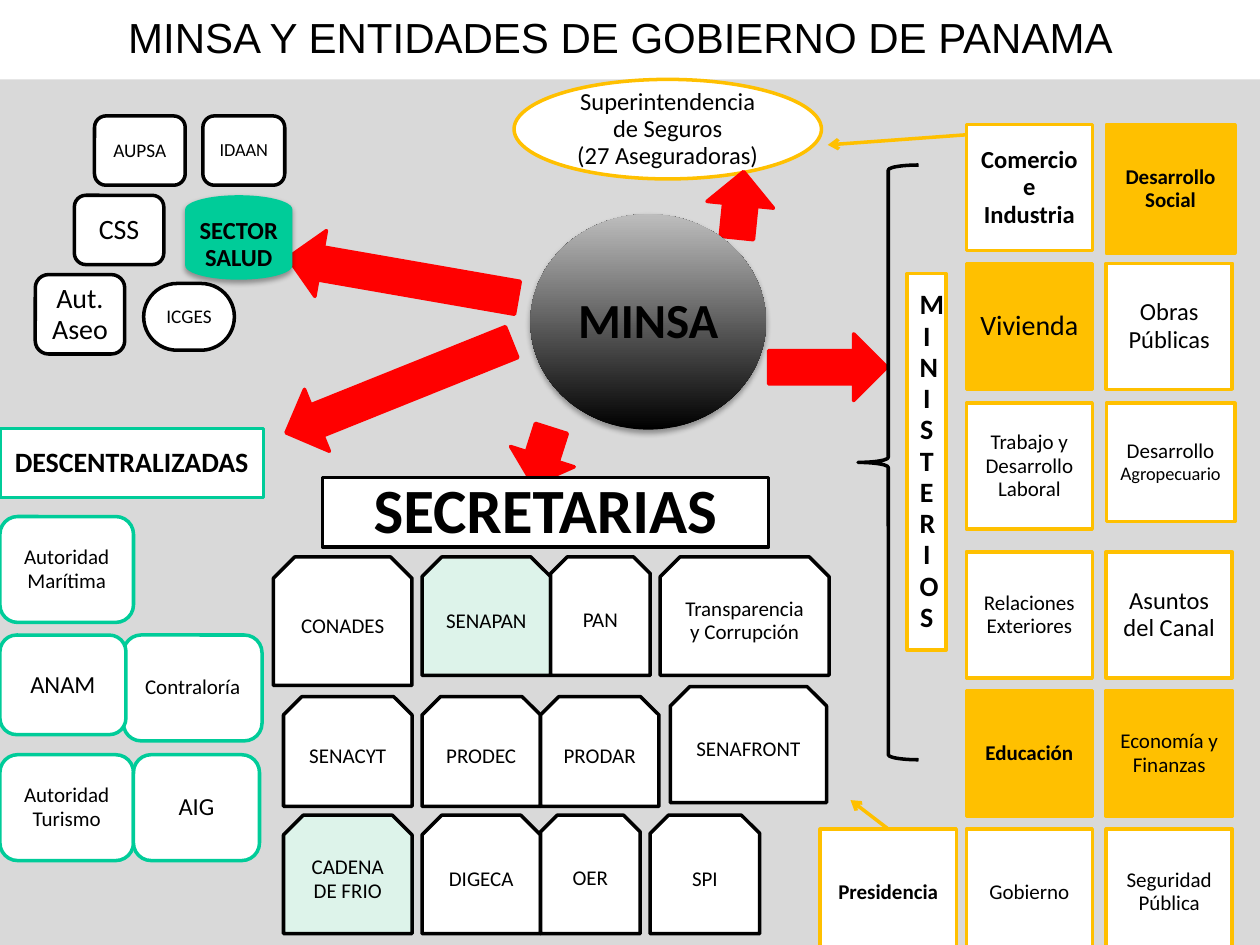
from lxml import etree
from pptx import Presentation
from pptx.dml.color import RGBColor
from pptx.enum.shapes import MSO_CONNECTOR, MSO_SHAPE as SHAPE
from pptx.enum.text import MSO_ANCHOR, PP_ALIGN
from pptx.oxml import parse_xml
from pptx.oxml.ns import nsdecls, qn
from pptx.util import Inches, Pt

BLACK = RGBColor(0x00, 0x00, 0x00)
WHITE = RGBColor(0xFF, 0xFF, 0xFF)
GREY = RGBColor(0xD9, 0xD9, 0xD9)
SILVER = RGBColor(0xBD, 0xBD, 0xBD)
RED = RGBColor(0xFF, 0x00, 0x00)
GREEN = RGBColor(0x00, 0xCC, 0x99)
MINT = RGBColor(0xDD, 0xF3, 0xEA)
GOLD = RGBColor(0xFF, 0xC0, 0x00)

TITLE = "MINSA Y ENTIDADES DE GOBIERNO DE PANAMA"

# text, (left, top, width, height), size
DECENTRALIZED = [
    ("Autoridad Turismo", (0, 5.99, 1.06, 0.84), 12),
    ("Contraloría", (0.98, 5.04, 1.1, 0.84), 12),
    ("ANAM", (0, 5.04, 1, 0.79), 14),
    ("Autoridad Marítima", (0, 4.1, 1.06, 0.84), 12),
    ("AIG", (1.06, 5.99, 1, 0.84), 14),
]
HEALTH = [
    ("CSS", (0.59, 1.55, 0.71, 0.55), 16),
    ("IDAAN", (1.61, 0.92, 0.65, 0.55), 10.5),
    ("AUPSA", (0.75, 0.92, 0.72, 0.55), 11),
    ("Aut. Aseo", (0.28, 2.18, 0.71, 0.63), 16),
]
# text, (left, top, width, height), fill
SECRETARIATS = [
    ("CONADES", (2.17, 4.42, 1.1, 1.02), WHITE),
    ("SENAPAN", (3.35, 4.42, 1.02, 0.94), MINT),
    ("PAN", (4.37, 4.42, 0.79, 0.94), WHITE),
    ("Transparencia y Corrupción", (5.24, 4.42, 1.34, 0.94), WHITE),
    ("SENACYT", (2.25, 5.53, 1.02, 0.87), WHITE),
    ("PRODEC", (3.35, 5.53, 0.94, 0.87), WHITE),
    ("PRODAR", (4.29, 5.53, 0.94, 0.87), WHITE),
    ("SENAFRONT", (5.32, 5.45, 1.24, 0.92), WHITE),
    ("CADENA DE FRIO", (2.25, 6.47, 1.02, 0.94), MINT),
    ("DIGECA", (3.35, 6.47, 0.94, 0.94), WHITE),
    ("OER", (4.29, 6.47, 0.79, 0.94), WHITE),
    ("SPI", (5.16, 6.47, 0.87, 0.94), WHITE),
]
# One row per pair of ministries: top, then (text, size, bold, fill, (width, height))
MINISTRY_LEFTS = (7.67, 8.78)
UNIT = (1, 1)
AGRICULTURE = [("Desarrollo ", 12), ("A", 11), ("gropecuario", 10.5)]
MINISTRIES = [
    (0.99, [("Comercio e Industria", 14, True, WHITE, UNIT),
            ("Desarrollo Social", 12, True, GOLD, (1.02, 1.02))]),
    (2.09, [("Vivienda", 16, False, GOLD, UNIT),
            ("Obras Públicas", 14, False, WHITE, UNIT)]),
    (3.2, [("Trabajo y Desarrollo Laboral", 12, False, WHITE, UNIT),
           (AGRICULTURE, 12, False, WHITE, (1.02, 0.94))]),
    (4.38, [("Relaciones\nExteriores", 12, False, WHITE, UNIT),
            ("Asuntos del Canal", 14, False, WHITE, UNIT)]),
    (5.48, [("Educación", 12, True, GOLD, UNIT),
            ("Economía y Finanzas", 12, False, GOLD, UNIT)]),
    (6.58, [("Gobierno", 12, False, WHITE, UNIT),
            ("Seguridad Pública", 12, False, WHITE, UNIT)]),
]

prs = Presentation()
prs.slide_width, prs.slide_height = Inches(10), Inches(7.5)
shapes = prs.slides.add_slide(prs.slide_layouts[6]).shapes


def write(sp, text, size, bold=False, font="Calibri", anchor=MSO_ANCHOR.MIDDLE):
    """Fill a shape with text; a list gives (words, size) runs of one paragraph."""
    tf = sp.text_frame
    tf.word_wrap = True
    tf.vertical_anchor = anchor
    if isinstance(text, str):
        paragraphs = [[(line, size)] for line in text.split("\n")]
    else:
        paragraphs = [text]
    for i, runs in enumerate(paragraphs):
        p = tf.paragraphs[0] if i == 0 else tf.add_paragraph()
        p.alignment = PP_ALIGN.CENTER
        p.line_spacing = 0.93
        for words, points in runs:
            r = p.add_run()
            r.text = words
            for name, value in {"name": font, "size": Pt(points), "bold": bold}.items():
                setattr(r.font, name, value)
            r.font.color.rgb = BLACK


def add(kind, at, fill=WHITE, line=None, text=None, size=12, bold=False, rotation=0):
    sp = shapes.add_shape(kind, *map(Inches, at))
    sp.shadow.inherit = False
    sp.rotation = rotation
    if fill is None:
        sp.fill.background()
    else:
        sp.fill.solid()
        sp.fill.fore_color.rgb = fill
    if line is None:
        sp.line.fill.background()
    else:
        sp.line.color.rgb = line
        sp.line.width = Pt(2)
    if text:
        write(sp, text, size, bold)
    return sp


def add_arrow(kind, at, rotation=0):
    sp = add(kind, at, RED, RED, rotation=rotation)
    etree.SubElement(sp.line._get_or_add_ln(), qn("a:round"))


def add_pointer(start, end):
    cx = shapes.add_connector(MSO_CONNECTOR.STRAIGHT, *map(Inches, start + end))
    cx.line.color.rgb = GOLD
    cx.line.width = Pt(2)
    etree.SubElement(cx.line._get_or_add_ln(), qn("a:tailEnd"), type="arrow")
    etree.SubElement(cx._element.spPr, qn("a:effectLst"))
    return cx


def drop_shadow(sp):
    effects = sp._element.spPr.find(qn("a:effectLst"))
    effects.append(parse_xml(
        f'<a:outerShdw {nsdecls("a")} blurRad="{Pt(3.1)}" dist="{Pt(1.8)}" dir="5400000" '
        'rotWithShape="0"><a:srgbClr val="000000"><a:alpha val="35000"/></a:srgbClr>'
        '</a:outerShdw>'))


add(SHAPE.RECTANGLE, (0, 0.63, 10, 7.12), GREY)
title = shapes.add_textbox(*map(Inches, (0.28, 0.08, 9.29, 0.92)))
write(title, TITLE, 24, font="Arial", anchor=MSO_ANCHOR.TOP)

# Decentralized bodies
add_arrow(SHAPE.DOWN_ARROW, (2.9, 2.11, 0.53, 1.93), 68.1)
for text, at, size in DECENTRALIZED:
    add(SHAPE.ROUNDED_RECTANGLE, at, WHITE, GREEN, text, size)
add(SHAPE.RECTANGLE, (0, 3.4, 2.09, 0.55), WHITE, GREEN, "DESCENTRALIZADAS", 16, True)

# Secretariats
add_arrow(SHAPE.DOWN_ARROW, (4.04, 3.39, 0.53, 0.47), 17.7)
for text, at, fill in SECRETARIATS:
    add(SHAPE.SNIP_2_SAME_RECTANGLE, at, fill, BLACK, text)
add(SHAPE.RECTANGLE, (2.56, 3.79, 3.54, 0.55), WHITE, BLACK, "SECRETARIAS", 36, True)

# Ministries
add(SHAPE.OVAL, (4.08, 0.63, 2.44, 0.79), WHITE, GOLD,
    "Superintendencia de Seguros\n(27 Aseguradoras)", 14)
add_arrow(SHAPE.RIGHT_ARROW, (5.61, 1.36, 0.53, 0.53), 275.8)
for top, row in MINISTRIES:
    for left, (text, size, bold, fill, extent) in zip(MINISTRY_LEFTS, row):
        add(SHAPE.RECTANGLE, (left, top) + extent, fill, GOLD, text, size, bold)
presidency = add(SHAPE.RECTANGLE, (6.51, 6.58, 1.08, 1), WHITE, GOLD,
                 "Presidencia", 12, True)
add_arrow(SHAPE.RIGHT_ARROW, (6.1, 2.65, 0.94, 0.53))
add(SHAPE.LEFT_BRACE, (6.81, 1.31, 0.48, 4.72), None, BLACK)
add_pointer((7.67, 1.07), (6.57, 1.15))
banner = add(SHAPE.RECTANGLE, (5.86, 3.51, 2.99, 0.31), WHITE, GOLD,
             "\n".join("MINISTERIOS"), 16, True, 270)
banner.text_frame._txBody.bodyPr.set("vert", "vert")
add_pointer((7.05, 6.58), (6.75, 6.35)).begin_connect(presidency, 0)

# Centre and health sector
minsa = add(SHAPE.OVAL, (4.21, 1.7, 1.87, 1.71), text="MINSA", size=28, bold=True)
minsa.fill.gradient()
minsa.fill.gradient_angle = 90
for stop, position, color in zip(minsa.fill.gradient_stops, (0, 1), (BLACK, SILVER)):
    stop.position = position
    stop.color.rgb = color
drop_shadow(minsa)
icges = add(SHAPE.ROUNDED_RECTANGLE, (1.14, 2.25, 0.72, 0.53), WHITE, BLACK, "ICGES", 11)
icges.adjustments[0] = 0.5
add_arrow(SHAPE.DOWN_ARROW, (2.93, 1.28, 0.53, 1.85), 99.9)
drop_shadow(add(SHAPE.FLOWCHART_MAGNETIC_DISK, (1.47, 1.55, 0.85, 0.67), GREEN,
                text="SECTOR\nSALUD", size=14, bold=True))
for text, at, size in HEALTH:
    add(SHAPE.ROUNDED_RECTANGLE, at, WHITE, BLACK, text, size)

prs.save("out.pptx")
